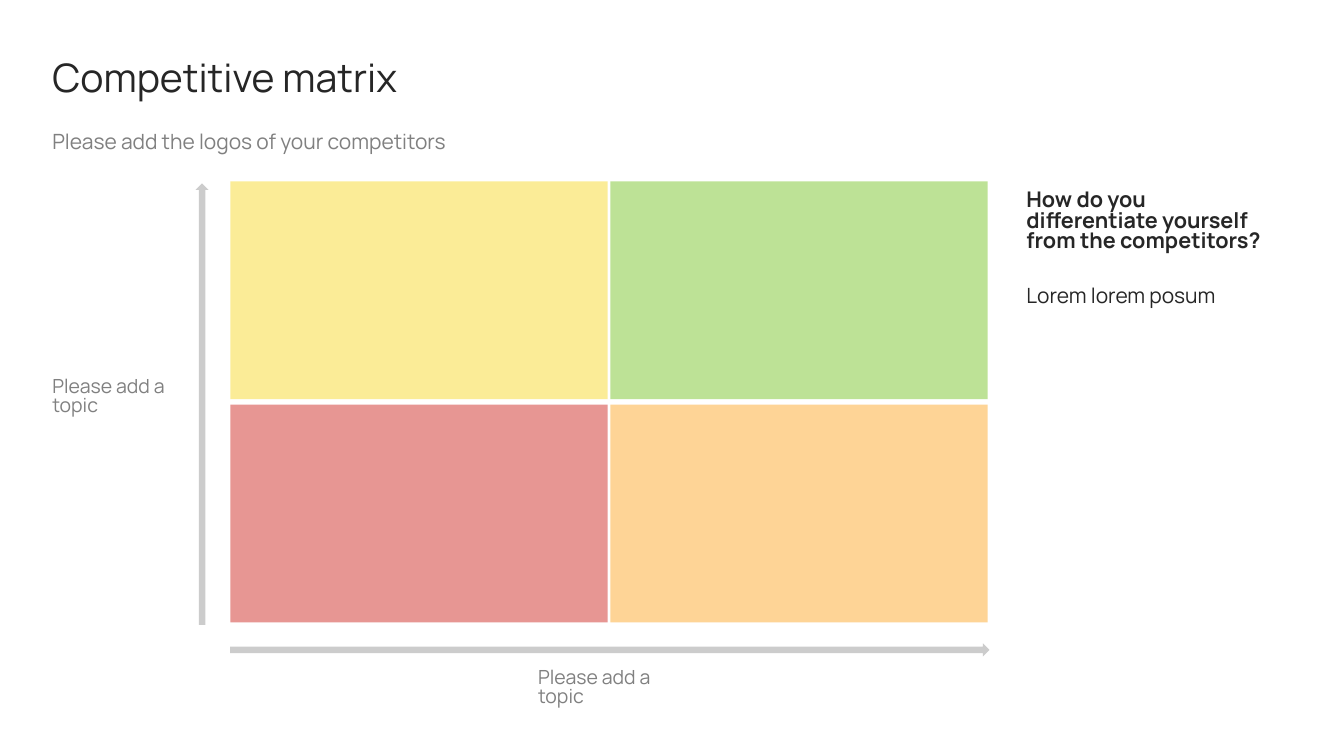
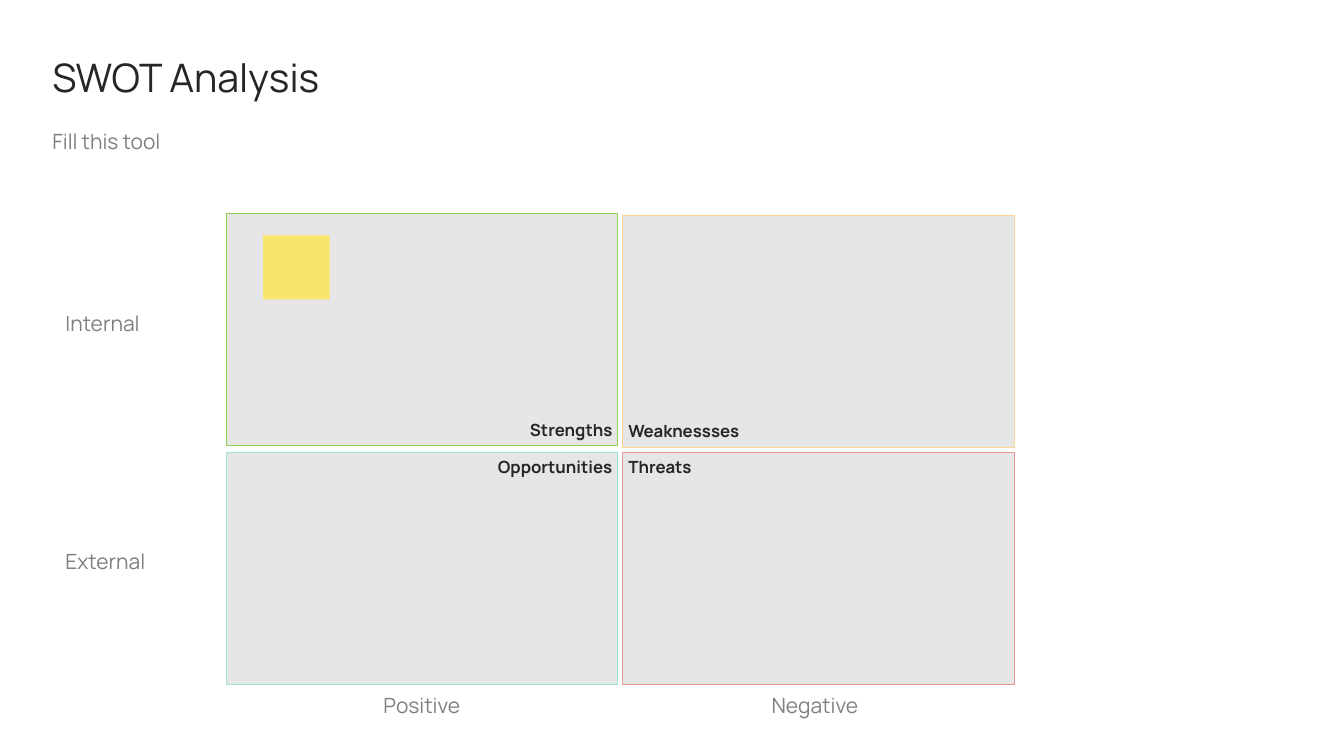
from dataclasses import dataclass

from lxml import etree
from pptx import Presentation
from pptx.dml.color import RGBColor
from pptx.enum.shapes import MSO_SHAPE as Shape
from pptx.enum.text import MSO_ANCHOR as Anchor, PP_ALIGN as Align
from pptx.oxml.ns import qn
from pptx.util import Inches, Pt


@dataclass(frozen=True)
class Theme:
    font: str = "Manrope"
    # Colours
    ink: str = "262626"
    muted: str = "808080"
    arrow: str = "CCCCCC"
    panel: str = "E7E6E6"
    yellow: str = "FAE56B"
    green: str = "92D050"
    red: str = "D8504C"
    orange: str = "FED496"
    mint: str = "A0E3CD"
    peach: str = "FFD494"
    rose: str = "E89694"
    # Type sizes
    title: float = 56
    question: float = 30.8
    body: float = 30
    topic: float = 27.8
    label: float = 24
    # Line spacing
    tight: float = 0.8
    heading: float = 0.9
    loose: float = 1.1


class Deck:
    """Holds the style and the slide being built."""

    def __init__(self, theme):
        self.theme = theme
        self.presentation = Presentation()
        self.presentation.slide_width = Inches(26.67)
        self.presentation.slide_height = Inches(15)
        self.slide = None

    def add_slide(self, title, subtitle):
        theme = self.theme
        blank = self.presentation.slide_layouts[6]
        self.slide = self.presentation.slides.add_slide(blank)
        self.text(title, 0.94, 1.11, 20.84, 1.2, theme.title, theme.ink,
                  spacing=theme.heading)
        self.text(subtitle, 0.94, 2.46, 21.27, 1.13)

    def text(self, words, left, top, width, height, size=None, color=None,
             bold=False, align=Align.LEFT, spacing=None):
        box = self.slide.shapes.add_textbox(
            Inches(left), Inches(top), Inches(width), Inches(height))
        frame = box.text_frame
        frame.word_wrap = True
        frame.vertical_anchor = Anchor.TOP
        paragraph = frame.paragraphs[0]
        paragraph.text = words
        paragraph.alignment = align
        paragraph.line_spacing = spacing or self.theme.loose
        font = paragraph.font
        font.name = self.theme.font
        font.size = Pt(size or self.theme.body)
        font.bold = bold
        font.color.rgb = RGBColor.from_string(color or self.theme.muted)

    def shape(self, kind, left, top, width, height, fill, line=None, opacity=100):
        shape = self.slide.shapes.add_shape(
            kind, Inches(left), Inches(top), Inches(width), Inches(height))
        shape.shadow.inherit = False
        shape.fill.solid()
        shape.fill.fore_color.rgb = RGBColor.from_string(fill)
        if opacity < 100:
            color = shape.fill._xPr.find(qn("a:solidFill"))[0]
            etree.SubElement(color, qn("a:alpha"), val=str(opacity * 1000))
        if line:
            shape.line.color.rgb = RGBColor.from_string(line)
            shape.line.width = Pt(1)
        else:
            shape.line.fill.background()
        return shape

    def rectangle(self, *place, **style):
        return self.shape(Shape.RECTANGLE, *place, **style)

    def axis_arrow(self, left, top, length, rotation=0):
        arrow = self.shape(Shape.UP_ARROW, left, top, 0.26, length, self.theme.arrow)
        arrow.rotation = rotation


def competitive_matrix(deck):
    theme = deck.theme
    deck.add_slide("Competitive matrix", "Please add the logos of your competitors")

    # Quadrants: column, row, colour, opacity
    quadrants = [
        (0, 0, theme.yellow, 70),
        (0, 1, theme.red, 60),
        (1, 0, theme.green, 60),
        (1, 1, theme.orange, 100),
    ]
    for column, row, color, opacity in quadrants:
        deck.rectangle(4.57 + 7.54 * column, 3.6 + 4.43 * row, 7.49, 4.32,
                       fill=color, opacity=opacity)

    # Axes and their topics
    deck.axis_arrow(3.88, 3.64, 8.76)
    deck.axis_arrow(11.97, 5.36, 15.07, rotation=90)
    for left, top, width in [(0.94, 7.47, 2.84), (10.58, 13.24, 2.94)]:
        deck.text("Please add a topic", left, top, width, 0.95, theme.topic,
                  spacing=theme.tight)

    # Question and answer
    deck.text("How do you differentiate yourself from the competitors?",
              20.27, 3.74, 5.22, 1.94, theme.question, theme.ink,
              bold=True, spacing=theme.tight)
    deck.text("Lorem lorem posum", 20.27, 5.51, 5.22, 7.53, color=theme.ink)


def swot_analysis(deck):
    theme = deck.theme
    deck.add_slide("SWOT Analysis", "Fill this tool")

    # Panels: name, column, top, outline, label top
    panels = [
        ("Strengths", 0, 4.24, theme.green, 8.23),
        ("Opportunities", 0, 8.97, theme.mint, 8.97),
        ("Weaknessses", 1, 4.27, theme.peach, 8.26),
        ("Threats", 1, 8.97, theme.rose, 8.98),
    ]
    for name, column, top, outline, label_top in panels:
        deck.rectangle(4.49 + 7.87 * column, top, 7.77, 4.6,
                       fill=theme.panel, line=outline)
        deck.text(name, (7.03, 12.37)[column], label_top, 5.22, 0.58,
                  theme.label, theme.ink, bold=True,
                  align=(Align.RIGHT, Align.LEFT)[column])

    # Row and column names
    for name, top in [("Internal", 6.06), ("External", 10.79)]:
        deck.text(name, 1.2, top, 2.84, 0.95)
    for name, left in [("Positive", 6.95), ("Negative", 14.75)]:
        deck.text(name, left, 13.65, 2.84, 0.95, align=Align.CENTER)

    # Sticky note
    deck.rectangle(5.22, 4.67, 1.32, 1.27, fill=theme.yellow)


def main():
    deck = Deck(Theme())
    competitive_matrix(deck)
    swot_analysis(deck)
    deck.presentation.save("out.pptx")


if __name__ == "__main__":
    main()
